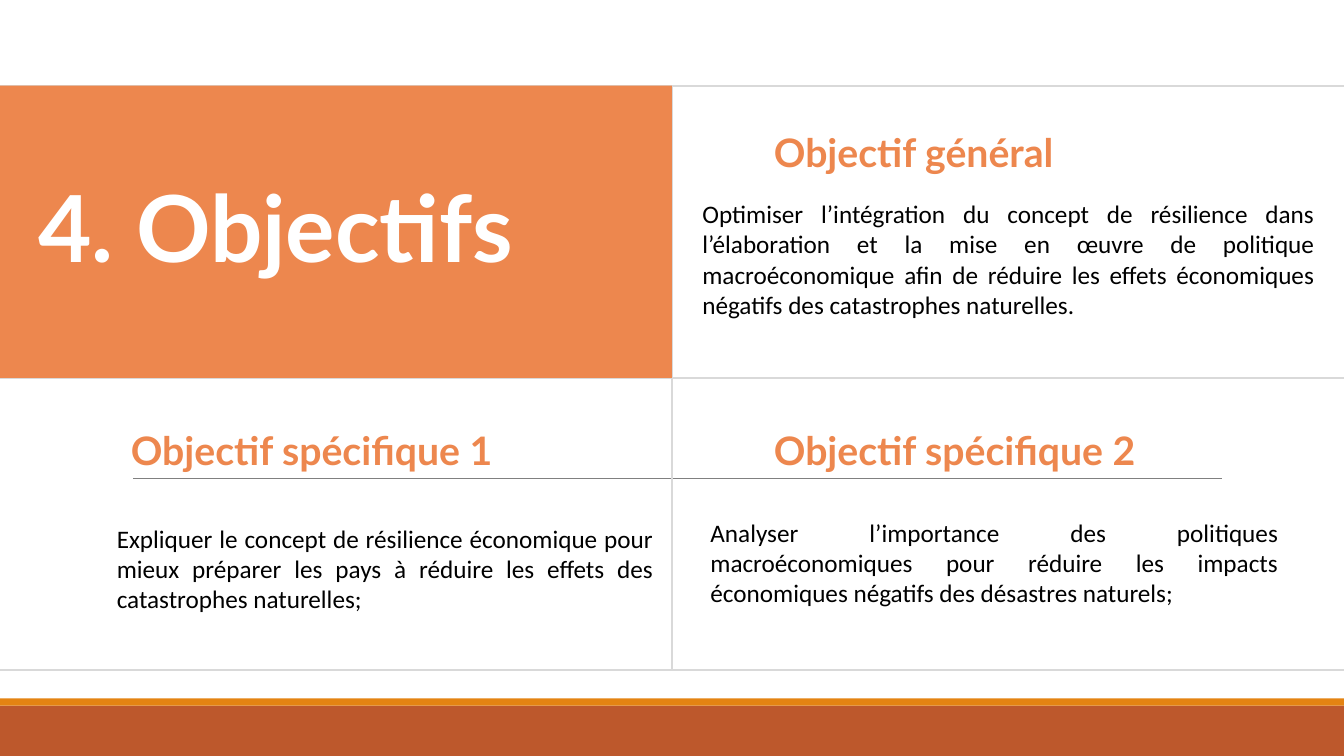
from lxml.etree import SubElement
from pptx import Presentation
from pptx.dml.color import RGBColor
from pptx.enum.shapes import MSO_CONNECTOR, MSO_SHAPE
from pptx.enum.text import MSO_ANCHOR, MSO_AUTO_SIZE, PP_ALIGN
from pptx.oxml.ns import qn
from pptx.util import Pt

WIDE, HIGH = 960, 540
MID, TOP, ROW = 480, 61.2, 208.8
COLORS = {
    "accent": "ED874E",
    "band": "BD582C",
    "strip": "E48312",
    "grid": "D9D9D9",
    "rule": "808080",
    "text": "000000",
    "title": "FFFFFF",
}
GOALS = [
    ("Objectif général", (545.76, 87.84),
     "Optimiser l’intégration du concept de résilience dans l’élaboration et la mise en œuvre "
     "de politique macroéconomique afin de réduire les effets économiques négatifs des "
     "catastrophes naturelles.", (494.64, 138.24, 451.44, 94.32)),
    ("Objectif spécifique 1", (86.4, 300.96),
     "Expliquer le concept de résilience économique pour mieux préparer les pays à réduire "
     "les effets des catastrophes naturelles;", (76.32, 370.08, 397.44, 72.72)),
    ("Objectif spécifique 2", (545.76, 300.96),
     "Analyser l’importance des politiques macroéconomiques pour réduire les impacts "
     "économiques négatifs des désastres naturels;", (500.4, 365.76, 419.76, 72.72)),
]


def color(name):
    """Return the named colour."""
    return RGBColor.from_string(COLORS[name])


def block(slide, box, name):
    """Draw a plain filled rectangle."""
    shape = slide.shapes.add_shape(MSO_SHAPE.RECTANGLE, *map(Pt, box))
    shape.shadow.inherit = False
    shape.fill.solid()
    shape.fill.fore_color.rgb = color(name)
    shape.line.fill.background()


def line(slide, ends, name, width):
    """Draw a straight line between two points."""
    rule = slide.shapes.add_connector(MSO_CONNECTOR.STRAIGHT, *map(Pt, ends))
    rule.line.color.rgb = color(name)
    rule.line.width = Pt(width)
    SubElement(rule.element.spPr, qn("a:effectLst"))


def write(shape, text, font, size, name, bold=False, align=PP_ALIGN.LEFT):
    """Fill a text shape with one formatted paragraph."""
    frame = shape.text_frame
    frame.text = text
    frame.word_wrap = True
    frame.auto_size = MSO_AUTO_SIZE.NONE
    frame.vertical_anchor = MSO_ANCHOR.TOP
    para = frame.paragraphs[0]
    para.alignment = align
    para.font.name = font
    para.font.size = Pt(size)
    para.font.bold = bold
    para.font.color.rgb = color(name)


def footer(slide, box):
    """Draw the band at the foot with its thin strip on top."""
    left, top, width, height = box
    strip = 5.04
    block(slide, (left, top + strip, width, height - strip), "band")
    block(slide, (left, top, width, strip), "strip")


def grid(slide, box):
    """Draw the lines of a grid of two rows and two columns."""
    left, top, width, height = box
    right, base = left + width, top + height
    line(slide, (95.04, 342, 872.64, 342), "rule", 0.5)
    for y in (top, base):
        line(slide, (left, y, right, y), "grid", 1.5)
    line(slide, (left + width / 2, base, left + width / 2, top), "grid", 1.5)
    line(slide, (left, top + height / 2, right, top + height / 2), "grid", 1.5)


def head(slide, box):
    """Fill the title cell and set the title on it."""
    left, top, width, height = box
    block(slide, box, "accent")
    title = slide.shapes.title
    slide.shapes.element.append(title.element)
    title.left, title.top = Pt(left + 20.16), Pt(top + 56.88)
    title.width, title.height = Pt(409.68), Pt(87.12)
    write(title, "4. Objectifs", "Lato", 66, "title", True)


def goal(slide, label, spot, text, box):
    """Write one goal: its heading and its justified text."""
    name = slide.shapes.add_textbox(*map(Pt, (*spot, 355.68, 41.04)))
    write(name, label, "Lato", 28, "accent", True)
    body = slide.shapes.add_textbox(*map(Pt, box))
    write(body, text, "Calibri", 18, "text", align=PP_ALIGN.JUSTIFY)


def main():
    """Build and save the slide."""
    deck = Presentation()
    deck.slide_width, deck.slide_height = Pt(WIDE), Pt(HIGH)
    slide = deck.slides.add_slide(deck.slide_layouts[5])
    footer(slide, (0, 498.96, WIDE, HIGH - 498.96))
    grid(slide, (0, TOP, WIDE, 2 * ROW))
    head(slide, (0, TOP, MID, ROW))
    for item in GOALS:
        goal(slide, *item)
    deck.save("out.pptx")


if __name__ == "__main__":
    main()
